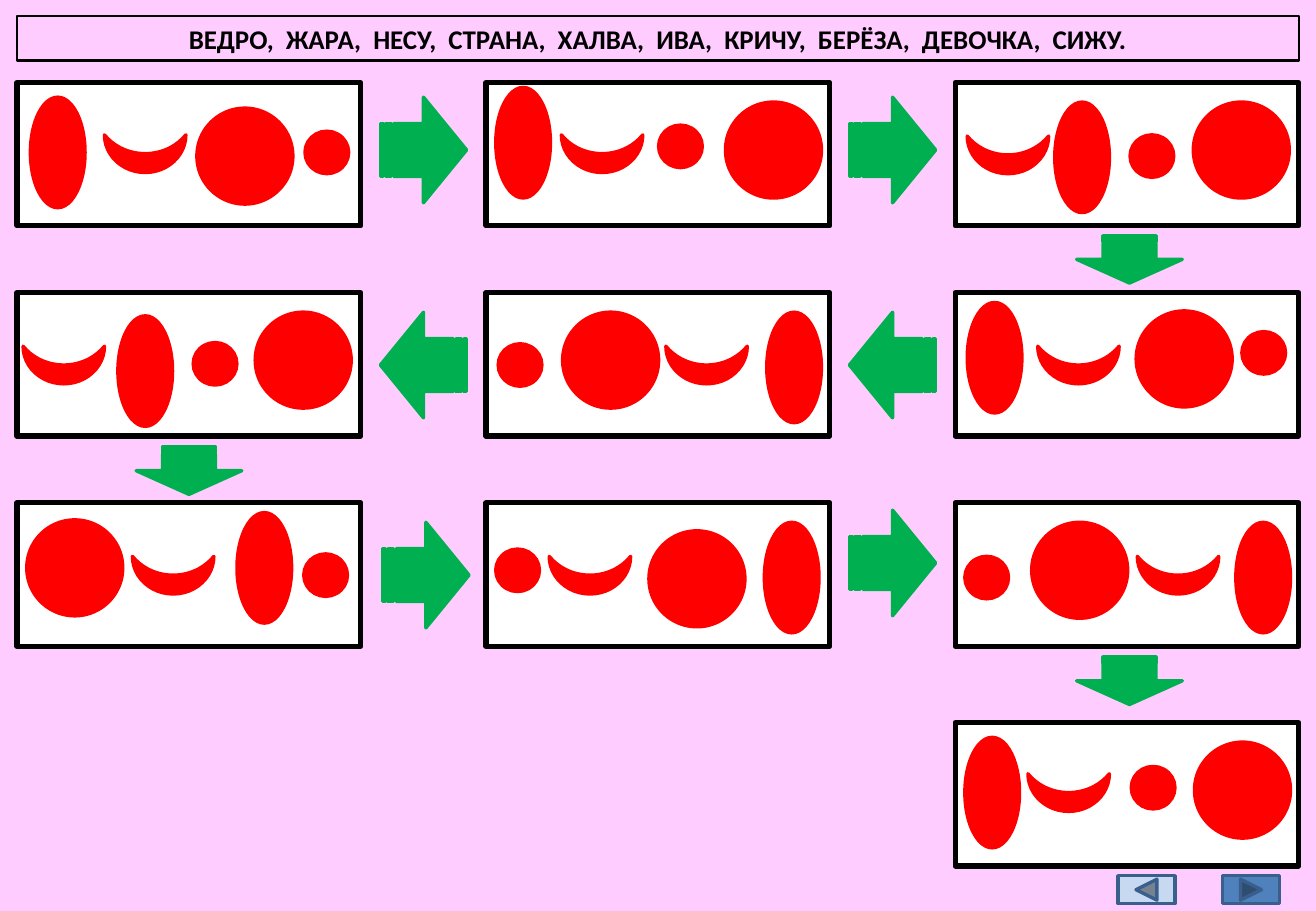
"""Build the word-scheme slide: ten cards of syllable shapes linked by arrows."""
from pptx import Presentation
from pptx.dml.color import RGBColor
from pptx.enum.shapes import MSO_SHAPE
from pptx.enum.text import MSO_ANCHOR, MSO_AUTO_SIZE, PP_ALIGN
from pptx.util import Inches, Pt

WORDS = ["ВЕДРО", "ЖАРА", "НЕСУ", "СТРАНА", "ХАЛВА",
         "ИВА", "КРИЧУ", "БЕРЁЗА", "ДЕВОЧКА", "СИЖУ"]

COLORS = {"background": "FFCCFF", "card": "FFFFFF", "ink": "000000",
          "symbol": "FF0000", "arrow": "00B050", "next": "4F81BD",
          "previous": "C6D9F1", "button_edge": "3A5F8C"}

COLUMNS = [0.14, 4.0, 7.86]
ROWS = [0.68, 2.41, 4.14, 5.95]
CARD_SIZE = (2.83, 1.18)

SYMBOLS = {
    "oval": (MSO_SHAPE.OVAL, 0.45, 0.91, 0),
    "big": (MSO_SHAPE.OVAL, 0.79, 0.79, 0),
    "small": (MSO_SHAPE.OVAL, 0.36, 0.35, 0),
    "moon": (MSO_SHAPE.MOON, 0.31, 0.67, 270),
}

CARDS = [
    (0, 0, [("oval", 0.25, 0.8), ("moon", 1.04, 0.93), ("big", 1.62, 0.89), ("small", 2.51, 1.08)]),
    (1, 0, [("oval", 4.08, 0.72), ("moon", 4.8, 0.93), ("small", 5.42, 1.03), ("big", 5.97, 0.84)]),
    (2, 0, [("moon", 8.14, 0.94), ("oval", 8.68, 0.84), ("small", 9.3, 1.11), ("big", 9.82, 0.84)]),
    (2, 1, [("oval", 7.96, 2.49), ("moon", 8.72, 2.67), ("big", 9.35, 2.56), ("small", 10.22, 2.73)]),
    (1, 1, [("small", 4.1, 2.83), ("big", 4.63, 2.57), ("moon", 5.66, 2.67), ("oval", 6.31, 2.57)]),
    (0, 1, [("moon", 0.37, 2.67), ("oval", 0.97, 2.6), ("small", 1.59, 2.82), ("big", 2.1, 2.57)]),
    (0, 2, [("big", 0.22, 4.28), ("moon", 1.27, 4.4), ("oval", 1.95, 4.22), ("small", 2.5, 4.56)]),
    (1, 2, [("small", 4.08, 4.52), ("moon", 4.7, 4.4), ("big", 5.34, 4.37), ("oval", 6.29, 4.3)]),
    (2, 2, [("small", 7.94, 4.58), ("big", 8.49, 4.3), ("moon", 9.54, 4.4), ("oval", 10.17, 4.3)]),
    (2, 3, [("oval", 7.94, 6.07), ("moon", 8.64, 6.19), ("small", 9.31, 6.31), ("big", 9.83, 6.11)]),
]

ARROW_SIZES = {0: (0.71, 0.87), 90: (0.39, 0.87), 180: (0.71, 0.87)}
ARROWS = [(3.13, 0.8, 0), (6.99, 0.8, 0), (9.1, 1.7, 90),
          (6.99, 2.57, 180), (3.13, 2.57, 180), (1.36, 3.44, 90),
          (3.15, 4.3, 0), (6.99, 4.2, 0), (9.1, 5.17, 90)]

BUTTONS = [("next", MSO_SHAPE.ACTION_BUTTON_FORWARD_OR_NEXT, 10.06),
           ("previous", MSO_SHAPE.ACTION_BUTTON_BACK_OR_PREVIOUS, 9.2)]


def color(name):
    return RGBColor.from_string(COLORS[name])


def add_figure(slide, kind, box, fill, edge, edge_width=2, rotation=0):
    figure = slide.shapes.add_shape(kind, *map(Inches, box))
    figure.rotation = rotation
    figure.shadow.inherit = False
    figure.fill.solid()
    figure.fill.fore_color.rgb = color(fill)
    figure.line.color.rgb = color(edge)
    figure.line.width = Pt(edge_width)


def add_word_list(slide):
    word_list = slide.shapes.title
    word_list.left, word_list.top = Inches(0.14), Inches(0.13)
    word_list.width, word_list.height = Inches(10.55), Inches(0.37)
    word_list.line.color.rgb = color("ink")
    word_list.line.width = Pt(1.5)
    frame = word_list.text_frame
    frame.text = ",  ".join(WORDS) + "."
    frame.word_wrap = True
    frame.auto_size = MSO_AUTO_SIZE.NONE
    frame.vertical_anchor = MSO_ANCHOR.MIDDLE
    line = frame.paragraphs[0]
    line.alignment = PP_ALIGN.CENTER
    line.font.name = "Calibri"
    line.font.size = Pt(16)
    line.font.bold = True
    line.font.color.rgb = color("ink")


def main():
    deck = Presentation()
    deck.slide_width, deck.slide_height = Inches(10.83), Inches(7.5)
    slide = deck.slides.add_slide(deck.slide_layouts[5])
    slide.background.fill.solid()
    slide.background.fill.fore_color.rgb = color("background")
    add_word_list(slide)

    for column, row, symbols in CARDS:
        add_figure(slide, MSO_SHAPE.RECTANGLE,
                   (COLUMNS[column], ROWS[row], *CARD_SIZE), "card", "ink", 3)
        for name, left, top in symbols:
            kind, width, height, rotation = SYMBOLS[name]
            add_figure(slide, kind, (left, top, width, height),
                       "symbol", "symbol", rotation=rotation)

    for left, top, rotation in ARROWS:
        add_figure(slide, MSO_SHAPE.STRIPED_RIGHT_ARROW,
                   (left, top, *ARROW_SIZES[rotation]),
                   "arrow", "arrow", rotation=rotation)

    for name, kind, left in BUTTONS:
        add_figure(slide, kind, (left, 7.21, 0.47, 0.23), name, "button_edge")

    deck.save("out.pptx")


if __name__ == "__main__":
    main()
